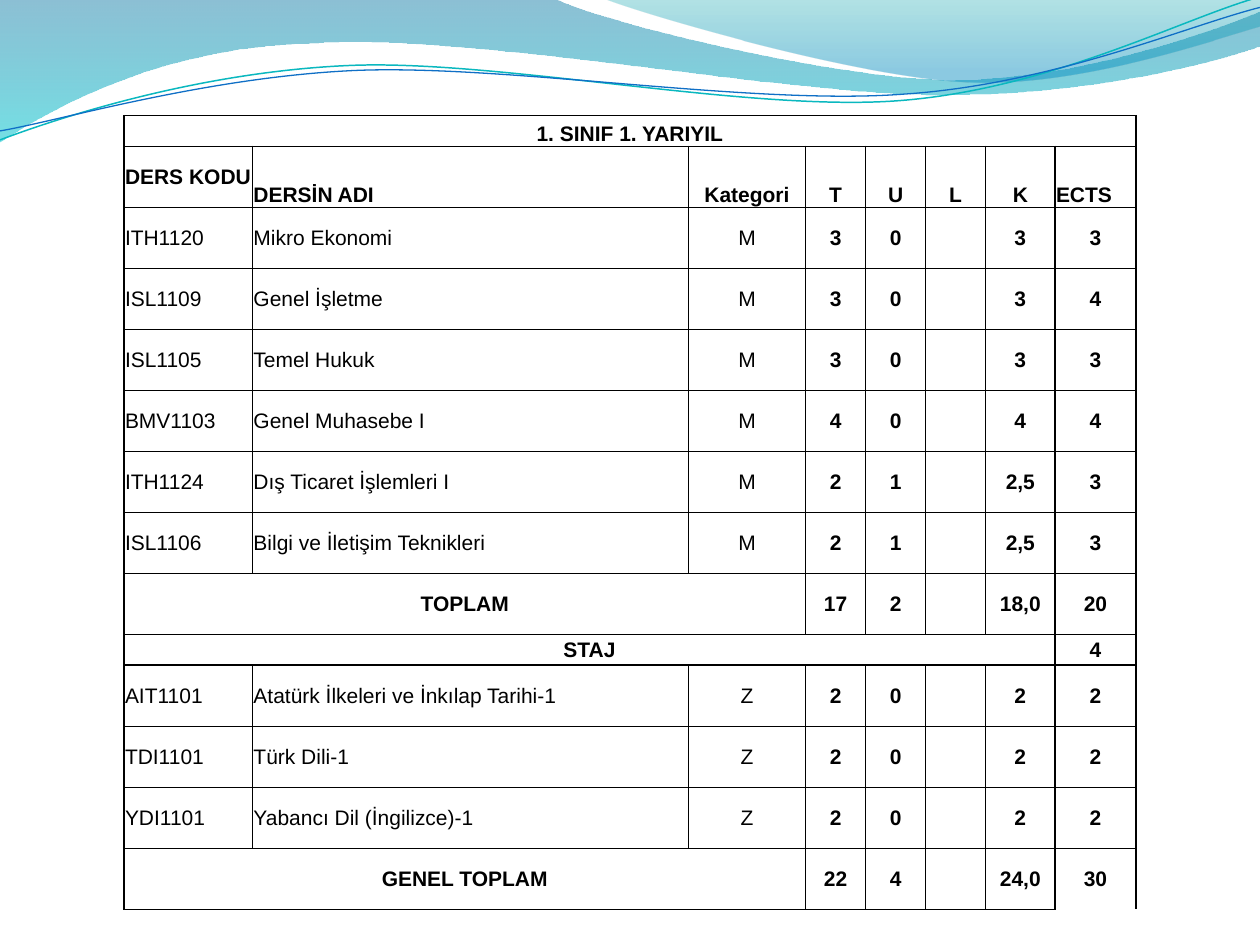
"""Build a slide with a first-semester course table under a wave banner."""
import math

import pptx
import pptx.dml.color
import pptx.enum.text
import pptx.oxml
import pptx.oxml.ns
import pptx.util

Cm = pptx.util.Cm
Pt = pptx.util.Pt
ALIGN = pptx.enum.text.PP_ALIGN
ANCHOR = pptx.enum.text.MSO_ANCHOR

COLUMN_WIDTHS = [2.59, 8.79, 2.36, 1.21, 1.21, 1.21, 1.4, 1.63]
ROWS = [
    ["1. SINIF 1. YARIYIL"],
    ["DERS KODU", "DERSİN ADI", "Kategori", "T", "U", "L", "K", "ECTS"],
    ["ITH1120", "Mikro Ekonomi", "M", "3", "0", "", "3", "3"],
    ["ISL1109", "Genel İşletme", "M", "3", "0", "", "3", "4"],
    ["ISL1105", "Temel Hukuk", "M", "3", "0", "", "3", "3"],
    ["BMV1103", "Genel Muhasebe I", "M", "4", "0", "", "4", "4"],
    ["ITH1124", "Dış Ticaret İşlemleri I", "M", "2", "1", "", "2,5", "3"],
    ["ISL1106", "Bilgi ve İletişim Teknikleri", "M", "2", "1", "", "2,5", "3"],
    ["TOPLAM", "17", "2", "", "18,0", "20"],
    ["STAJ", "4"],
    ["AIT1101", "Atatürk İlkeleri ve İnkılap Tarihi-1", "Z", "2", "0", "", "2", "2"],
    ["TDI1101", "Türk Dili-1", "Z", "2", "0", "", "2", "2"],
    ["YDI1101", "Yabancı Dil (İngilizce)-1", "Z", "2", "0", "", "2", "2"],
    ["GENEL TOPLAM", "22", "4", "", "24,0", "30"],
]
HEAVY_BELOW = {-1, 0, 1, 7, 8, 9, 12, 13}

LEFT_WAVE = [
    [(0, 0)], [(11.18, -0.03)],
    [(12.09, 0.43), (16.87, 1.6), (19.25, 1.6)],
    [(21.67, 1.6), (24.33, 0.66), (25.4, 0.23)],
    [(25.43, 0.91)],
    [(24.97, 1.12), (22.1, 1.93), (18.95, 1.91)],
    [(15.8, 1.91), (9.7, 0.71), (6.53, 0.86)],
    [(3.28, 0.91), (1.17, 2.11), (-0.03, 2.87)],
    [(0, 0)],
]
RIGHT_WAVE = [
    [(12.17, -0.03)],
    [(12.93, 0.28), (17.32, 1.57), (19.53, 1.65)],
    [(21.74, 1.75), (24.41, 0.81), (25.4, 0.53)],
    [(25.4, 0)], [(12.17, -0.03)],
]
TEAL_CURVE = [
    [(0, 2.82)],
    [(1.22, 2.36), (4.01, 1.45), (7.04, 1.32)],
    [(10.03, 1.19), (15.06, 2.26), (18.11, 2.03)],
    [(21.16, 1.8), (23.83, 0.38), (25.35, -0.05)],
]
BLUE_CURVE = [
    [(0, 2.64)],
    [(1.19, 2.44), (4.17, 1.55), (7.19, 1.42)],
    [(10.24, 1.3), (15.16, 2.13), (18.21, 1.9)],
    [(21.23, 1.7), (23.9, 0.53), (25.4, 0.15)],
]


def color(value):
    """Turn a hex string into a colour."""
    return pptx.dml.color.RGBColor.from_string(value)


def write_text(frame, text, *, font="Arial", size=12, bold=False,
               fill="000000", align=ALIGN.LEFT):
    """Write one formatted paragraph into a text frame."""
    paragraph = frame.paragraphs[0]
    paragraph.alignment = align
    run = paragraph.add_run()
    run.text = text
    run.font.name, run.font.size, run.font.bold = font, Pt(size), bold
    run.font.color.rgb = color(fill)


def turn(segments, degrees, center):
    """Rotate segments clockwise about a center."""
    cosine, sine = math.cos(math.radians(degrees)), math.sin(math.radians(degrees))
    return [[(center[0] + (x - center[0]) * cosine - (y - center[1]) * sine,
              center[1] + (x - center[0]) * sine + (y - center[1]) * cosine)
             for x, y in segment] for segment in segments]


class SlideBuilder:
    """Hold the style and the current slide."""

    line_color = "000000"
    margin = Cm(0.02)
    heavy, light = 1, 0.5

    def __init__(self, presentation):
        self.slide = presentation.slides.add_slide(presentation.slide_layouts[6])

    def outline(self, segments, close):
        """Add a freeform of lines and cubic curves given in centimetres."""
        points = [(Cm(x), Cm(y)) for segment in segments for x, y in segment]
        builder = self.slide.shapes.build_freeform(*points[0])
        builder.add_line_segments(points[1:], close=close)
        shape = builder.convert_to_shape()
        shape.shadow.inherit = False
        lines = iter(list(shape._element.iter(pptx.oxml.ns.qn("a:lnTo"))))
        for segment in segments[1:]:
            group = [next(lines) for _ in segment]
            if len(group) == 3:
                curve = pptx.oxml.parse_xml(
                    f'<a:cubicBezTo {pptx.oxml.ns.nsdecls("a")}/>')
                group[0].addprevious(curve)
                for line in group:
                    curve.append(line[0])
                    line.getparent().remove(line)
        return shape

    def wave(self, segments, stops):
        """Add a wave with a translucent vertical gradient."""
        shape = self.outline(segments, True)
        shape.line.fill.background()
        shape.fill.gradient()
        shape.fill.gradient_angle = 270
        for stop, (position, value, opacity) in zip(shape.fill.gradient_stops, stops):
            stop.position = position
            stop.color.rgb = color(value)
            rgb = stop._gs.find(pptx.oxml.ns.qn("a:srgbClr"))
            rgb.append(pptx.oxml.parse_xml(
                f'<a:alpha {pptx.oxml.ns.nsdecls("a")} val="{opacity * 1000}"/>'))

    def curve(self, segments, value, width, center, tilt=2.7):
        """Add a thin curve tilted counterclockwise."""
        shape = self.outline(turn(segments, tilt, center), False)
        shape.rotation = 360 - tilt
        shape.fill.background()
        shape.line.color.rgb = color(value)
        shape.line.width = Pt(width)

    def borders(self, cell, widths):
        """Set the left, right, top and bottom borders of a cell."""
        properties = cell._tc.get_or_add_tcPr()
        for index, (side, width) in enumerate(zip("LRTB", widths)):
            paint = (f'<a:solidFill><a:srgbClr val="{self.line_color}"/></a:solidFill>'
                     if width else "<a:noFill/>")
            properties.insert(index, pptx.oxml.parse_xml(
                f'<a:ln{side} {pptx.oxml.ns.nsdecls("a")} w="{Pt(width)}">'
                f'{paint}</a:ln{side}>'))

    def table(self, left, top, widths, rows, tall=1.23, short=0.62):
        """Add the course table, spanning the first cell of short rows."""
        heights = [short if len(row) <= 2 else tall for row in rows]
        table = self.slide.shapes.add_table(
            len(rows), len(widths), Cm(left), Cm(top),
            Cm(sum(widths)), Cm(sum(heights))).table
        table.first_row = table.horz_banding = False
        for column, width in zip(table.columns, widths):
            column.width = Cm(width)
        for table_row, height in zip(table.rows, heights):
            table_row.height = Cm(height)
        for row, texts in enumerate(rows):
            span = len(widths) - len(texts) + 1
            if span > 1:
                table.cell(row, 0).merge(table.cell(row, span - 1))
            padded = texts[:1] + [""] * (span - 1) + texts[1:]
            for column, text in enumerate(padded):
                self.cell(table.cell(row, column), text, row, column, span)

    def cell(self, cell, text, row, column, span):
        """Format one cell by its place in the table."""
        cell.margin_left = cell.margin_right = cell.margin_top = self.margin
        cell.margin_bottom = 0
        header = row == 0 or (row == 1 and column > 0)
        cell.vertical_anchor = ANCHOR.BOTTOM if header else ANCHOR.MIDDLE
        cell.fill.background()
        top, bottom = (
            self.heavy if edge in HEAVY_BELOW and (edge, column) != (1, 0) else self.light
            for edge in (row - 1, row))
        if (row, column) == (len(ROWS) - 1, len(COLUMN_WIDTHS) - 1):
            bottom = 0
        self.borders(cell, (self.heavy, self.heavy, top, bottom))
        if text:
            flush = (span == 1 and column < 2) or text == "ECTS"
            write_text(cell.text_frame, text, bold=row < 2 or span > 1 or column > 2,
                       align=ALIGN.LEFT if flush else ALIGN.CENTER)


def main():
    """Build and save the slide."""
    presentation = pptx.Presentation()
    presentation.slide_width, presentation.slide_height = Cm(25.4), Cm(19.05)
    builder = SlideBuilder(presentation)
    builder.wave(LEFT_WAVE, [(0, "0074A1", 45), (1, "00C6CF", 55)])
    builder.wave(RIGHT_WAVE, [(0, "00A1A9", 30), (0.8, "008BBF", 45)])
    builder.curve(TEAL_CURVE, "0AB8BF", 0.85, center=(12.67, 1.46))
    builder.curve(BLUE_CURVE, "0F6FC6", 0.75, center=(12.69, 1.5))
    builder.table(2.5, 2.33, COLUMN_WIDTHS, ROWS)
    presentation.save("out.pptx")


if __name__ == "__main__":
    main()
